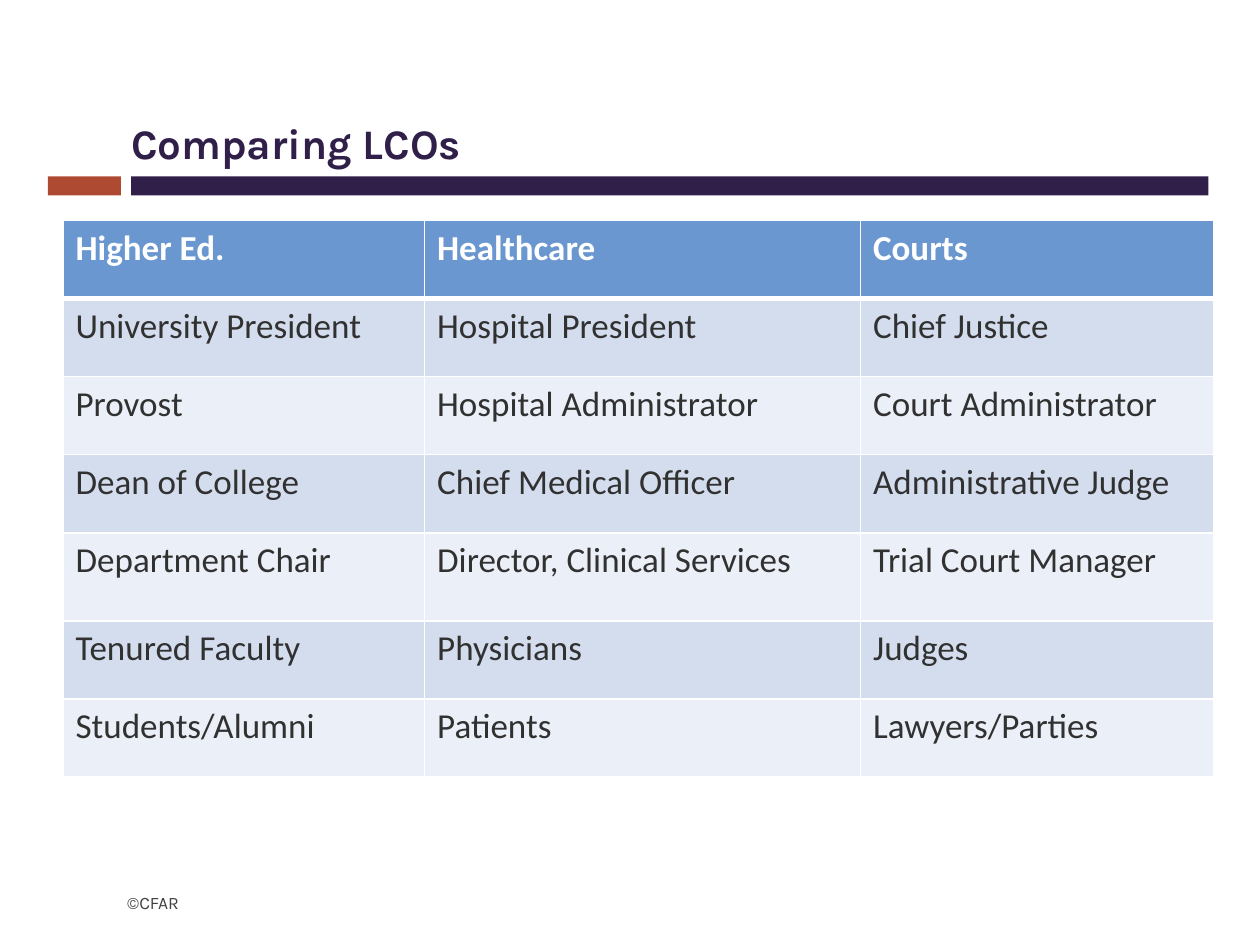
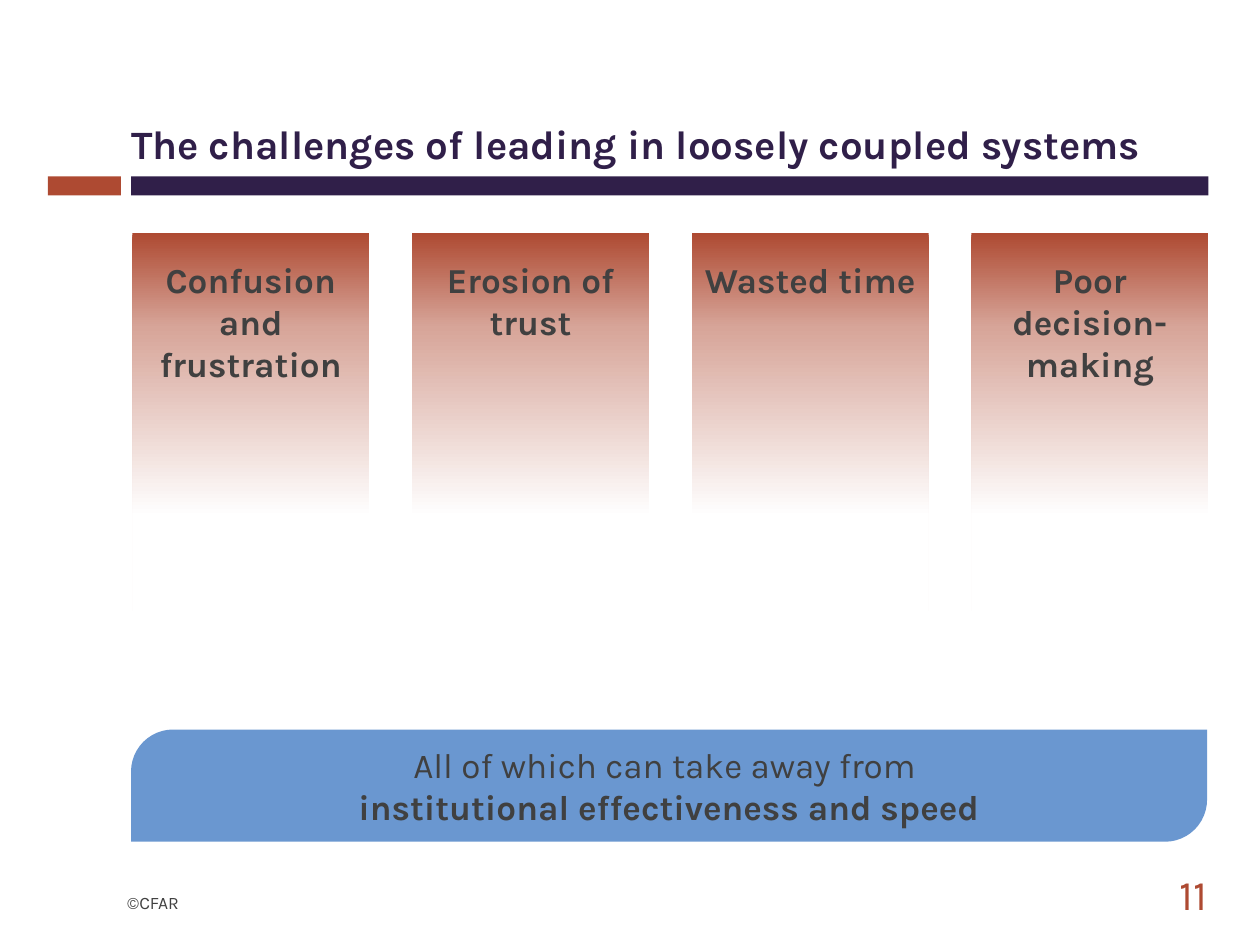
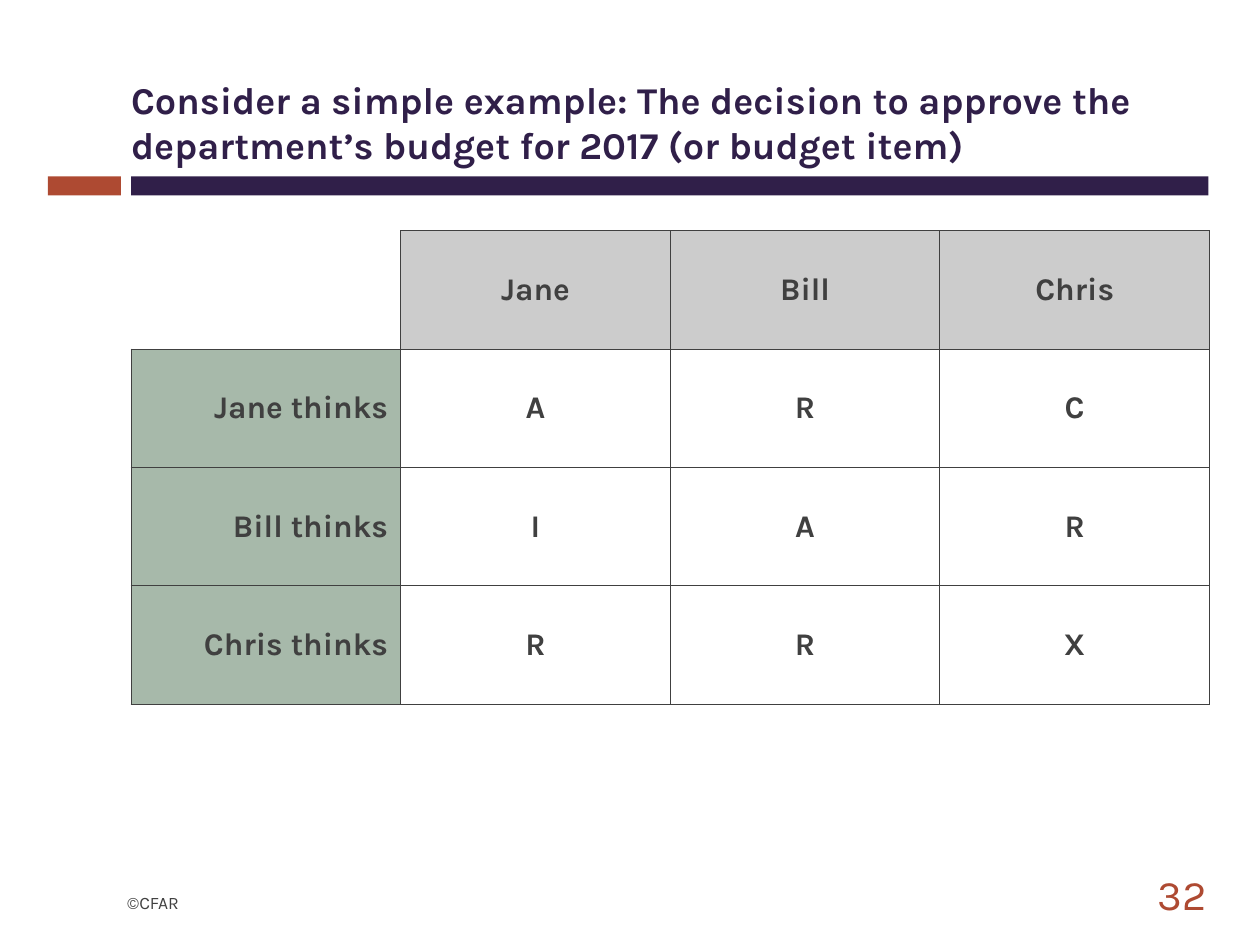
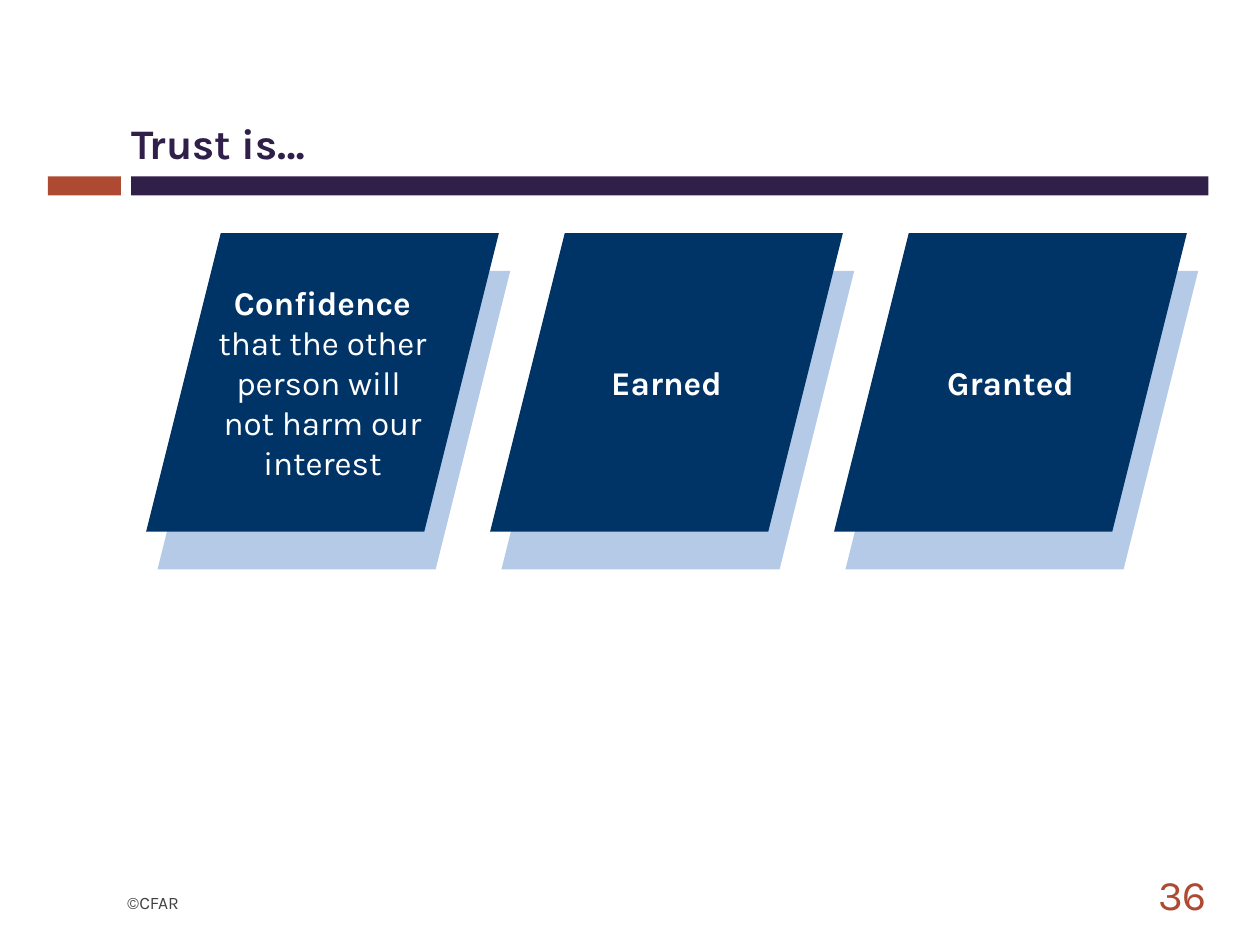
from copy import deepcopy
from dataclasses import dataclass
from typing import Optional

from lxml import etree
from pptx import Presentation
from pptx import util as u
from pptx.dml.color import RGBColor
from pptx.enum import shapes, text
from pptx.oxml import ns

PURPLE = RGBColor(0x30, 0x1F, 0x49)
RUST = RGBColor(0xAE, 0x4A, 0x32)
PALE_RUST = RGBColor(0xD7, 0xA5, 0x99)
WHITE = RGBColor(0xFF, 0xFF, 0xFF)
CHARCOAL = RGBColor(0x40, 0x40, 0x40)
INK = RGBColor(0x31, 0x31, 0x31)
BLUE = RGBColor(0x6A, 0x97, 0xD0)
BAND_DARK = RGBColor(0xD4, 0xDD, 0xEE)
BAND_LIGHT = RGBColor(0xEB, 0xEF, 0xF7)
NAVY = RGBColor(0x00, 0x33, 0x66)
GREY = RGBColor(0xCC, 0xCC, 0xCC)
SAGE = RGBColor(0xA7, 0xB9, 0xAA)

EMU_PER_PX = 9144
SHAPE = shapes.MSO_SHAPE
LEFT, CENTER, RIGHT = text.PP_ALIGN.LEFT, text.PP_ALIGN.CENTER, text.PP_ALIGN.RIGHT
TOP, MIDDLE, BOTTOM = text.MSO_ANCHOR.TOP, text.MSO_ANCHOR.MIDDLE, text.MSO_ANCHOR.BOTTOM


def px(*lengths):
    return [u.Emu(length * EMU_PER_PX) for length in lengths]


@dataclass
class CellLook:
    borders: dict
    border_color: RGBColor
    fill: Optional[RGBColor]
    color: RGBColor
    size: int
    font: str = "Karla"
    bold: bool = True
    align: int = LEFT
    anchor: int = TOP


class Deck:
    font = "Karla"

    def __init__(self):
        self.prs = Presentation()
        self.prs.slide_width, self.prs.slide_height = px(1000, 750)
        self.slide = None

    def new_slide(self, title, size=24, width=854, number=None):
        self.slide = self.prs.slides.add_slide(self.prs.slide_layouts[5])
        self.shape(SHAPE.RECTANGLE, (38, 140, 58, 15), RUST)
        self.shape(SHAPE.RECTANGLE, (104, 140, 855, 15), PURPLE)
        self.label((101, 701, 48, 31), "©CFAR", 10, CHARCOAL, LEFT)
        heading = self.slide.shapes.title
        heading.left, heading.top, heading.width, heading.height = px(104, 50, width, 88)
        self.set_text(heading.text_frame, [(title, True)], size, PURPLE, LEFT, BOTTOM,
                      (0, 5, 10, 5))
        if number:
            self.label((890, 683, 68, 52), number, 24, RUST, RIGHT)

    def set_text(self, frame, runs, size, color, align=CENTER, anchor=MIDDLE,
                 insets=(10, 5, 10, 5), wrap=True):
        frame.auto_size = text.MSO_AUTO_SIZE.NONE
        frame.word_wrap = wrap
        frame.vertical_anchor = anchor
        (frame.margin_left, frame.margin_top,
         frame.margin_right, frame.margin_bottom) = px(*insets)
        self.add_runs(frame.paragraphs[0], runs, size, color, align, self.font)

    def add_runs(self, paragraph, runs, size, color, align, font):
        paragraph.alignment = align
        for words, bold in runs:
            for index, line in enumerate(words.split("\n")):
                if index:
                    paragraph.add_line_break()
                if line:
                    run = paragraph.add_run()
                    run.text = line
                    run.font.name, run.font.size = font, u.Pt(size)
                    run.font.bold, run.font.color.rgb = bold, color

    def label(self, box, words, size, color, align):
        frame = self.slide.shapes.add_textbox(*px(*box)).text_frame
        self.set_text(frame, [(words, False)], size, color, align, insets=(0, 0, 0, 0))

    def shape(self, kind, box, fill=None, alpha=None, parent=None):
        item = (parent or self.slide).shapes.add_shape(kind, *px(*box))
        item.shadow.inherit = False
        item.line.fill.background()
        if fill is not None:
            item.fill.solid()
            item.fill.fore_color.rgb = fill
        if alpha is not None:
            color = item.element.spPr.find(".//" + ns.qn("a:srgbClr"))
            etree.SubElement(color, ns.qn("a:alpha"), val=str(alpha * 1000))
        return item

    def fading_card(self, box, stops):
        card = self.shape(SHAPE.RECTANGLE, box)
        card.fill.gradient()
        card.fill.gradient_angle = 270
        stop_list = card.element.spPr.find(".//" + ns.qn("a:gsLst"))
        while len(stop_list) < len(stops):
            stop_list.append(deepcopy(stop_list[0]))
        for stop, (position, color) in zip(card.fill.gradient_stops, stops):
            stop.position = position
            stop.color.rgb = color
        return card

    def shadowed_tile(self, box, runs, wrap=True):
        left, top, width, height = box
        pair = self.slide.shapes.add_group_shape()
        self.shape(SHAPE.PARALLELOGRAM, (left + 9, top + 30, width, height), BLUE, 50, pair)
        face = self.shape(SHAPE.PARALLELOGRAM, box, NAVY, parent=pair)
        self.set_text(face.text_frame, runs, 19, WHITE, insets=(10, 10, 10, 10), wrap=wrap)

    def table(self, left, top, widths, heights, rows, look_at):
        box = px(left, top, sum(widths), sum(heights))
        grid = self.slide.shapes.add_table(len(rows), len(widths), *box).table
        grid.first_row = grid.horz_banding = False
        for column, width in zip(grid.columns, px(*widths)):
            column.width = width
        for row, height in zip(grid.rows, px(*heights)):
            row.height = height
        for r, row in enumerate(rows):
            for c, words in enumerate(row):
                self.cell(grid.cell(r, c), words, look_at(r, c))

    def cell(self, cell, words, look):
        properties = cell._tc.get_or_add_tcPr()
        for side in "LRTB":
            if side in look.borders:
                line = etree.SubElement(properties, ns.qn("a:ln" + side),
                                        w=str(u.Pt(look.borders[side])))
                solid = etree.SubElement(line, ns.qn("a:solidFill"))
                etree.SubElement(solid, ns.qn("a:srgbClr"), val=str(look.border_color))
        if look.fill is None:
            cell.fill.background()
        else:
            cell.fill.solid()
            cell.fill.fore_color.rgb = look.fill
        cell.vertical_anchor = look.anchor
        self.add_runs(cell.text_frame.paragraphs[0], [(words, look.bold)],
                      look.size, look.color, look.align, look.font)


def role_look(r, c):
    if r == 0:
        return CellLook(dict(L=1, R=1, T=1, B=3), WHITE, BLUE, WHITE, 20, "Calibri")
    borders = dict(L=1, R=1, B=1) if r == 1 else dict(L=1, R=1, T=1, B=1)
    band = BAND_DARK if r % 2 else BAND_LIGHT
    return CellLook(borders, WHITE, band, INK, 20, "Calibri", False)


def opinion_look(r, c):
    borders = dict.fromkeys("LRTB" if r or c else "RB", 0.5)
    fill, align = None, CENTER
    if r == 0 and c:
        fill = GREY
    elif r and c == 0:
        fill, align = SAGE, RIGHT
    return CellLook(borders, CHARCOAL, fill, CHARCOAL, 18, align=align, anchor=MIDDLE)


def comparing_slide(deck):
    deck.new_slide("Comparing LCOs")
    roles = [
        ("Higher Ed.", "Healthcare", "Courts"),
        ("University President", "Hospital President", "Chief Justice"),
        ("Provost", "Hospital Administrator", "Court Administrator"),
        ("Dean of College", "Chief Medical Officer", "Administrative Judge"),
        ("Department Chair", "Director, Clinical Services", "Trial Court Manager"),
        ("Tenured Faculty", "Physicians", "Judges"),
        ("Students/Alumni", "Patients", "Lawyers/Parties"),
    ]
    heights = [70 if row[0] == "Department Chair" else 62 for row in roles]
    deck.table(50, 175, (287, 346, 280), heights, roles, role_look)


def challenges_slide(deck):
    deck.new_slide("The challenges of leading in loosely coupled systems", 23, 896, "11")
    outcome = deck.shape(SHAPE.ROUND_2_DIAG_RECTANGLE, (104, 579, 854, 89), BLUE)
    outcome.adjustments[0], outcome.adjustments[1] = 0.375, 0
    deck.set_text(outcome.text_frame, [("All of which can take away from \n", False),
                                       ("institutional effectiveness and speed", True)],
                  20, CHARCOAL)
    challenges = ("Confusion and frustration", "Erosion of trust", "Wasted time",
                  "Poor\ndecision-\nmaking")
    fade = ((0, RUST), (0.25, PALE_RUST), (0.75, WHITE))
    for index, challenge in enumerate(challenges):
        card = deck.fading_card((105 + 222 * index, 185, 188, 300), fade)
        deck.set_text(card.text_frame, [(challenge, True)], 20, CHARCOAL, anchor=TOP,
                      insets=(10, 20, 10, 5), wrap="\n" not in challenge)


def budget_slide(deck):
    deck.new_slide("Consider a simple example: The decision to approve the "
                   "department’s budget for 2017 (or budget item)", 21.6, number="32")
    people = ("Jane", "Bill", "Chris")
    opinions = ("ARC", "IAR", "RRX")
    rows = [("", *people)]
    rows += [(f"{person} thinks", *codes) for person, codes in zip(people, opinions)]
    deck.table(104, 183, [214] * 4, [94] * 4, rows, opinion_look)


def trust_slide(deck):
    deck.new_slide("Trust is…", number="36")
    meanings = (
        [("Confidence\n", True),
         ("that the other\nperson will \nnot harm our\ninterest", False)],
        [("Earned", True)],
        [("Granted", True)],
    )
    for index, meaning in enumerate(meanings):
        deck.shadowed_tile((116 + 273 * index, 185, 280, 237), meaning, wrap=len(meaning) == 1)


def main():
    deck = Deck()
    for build in (comparing_slide, challenges_slide, budget_slide, trust_slide):
        build(deck)
    deck.prs.save("out.pptx")


if __name__ == "__main__":
    main()
